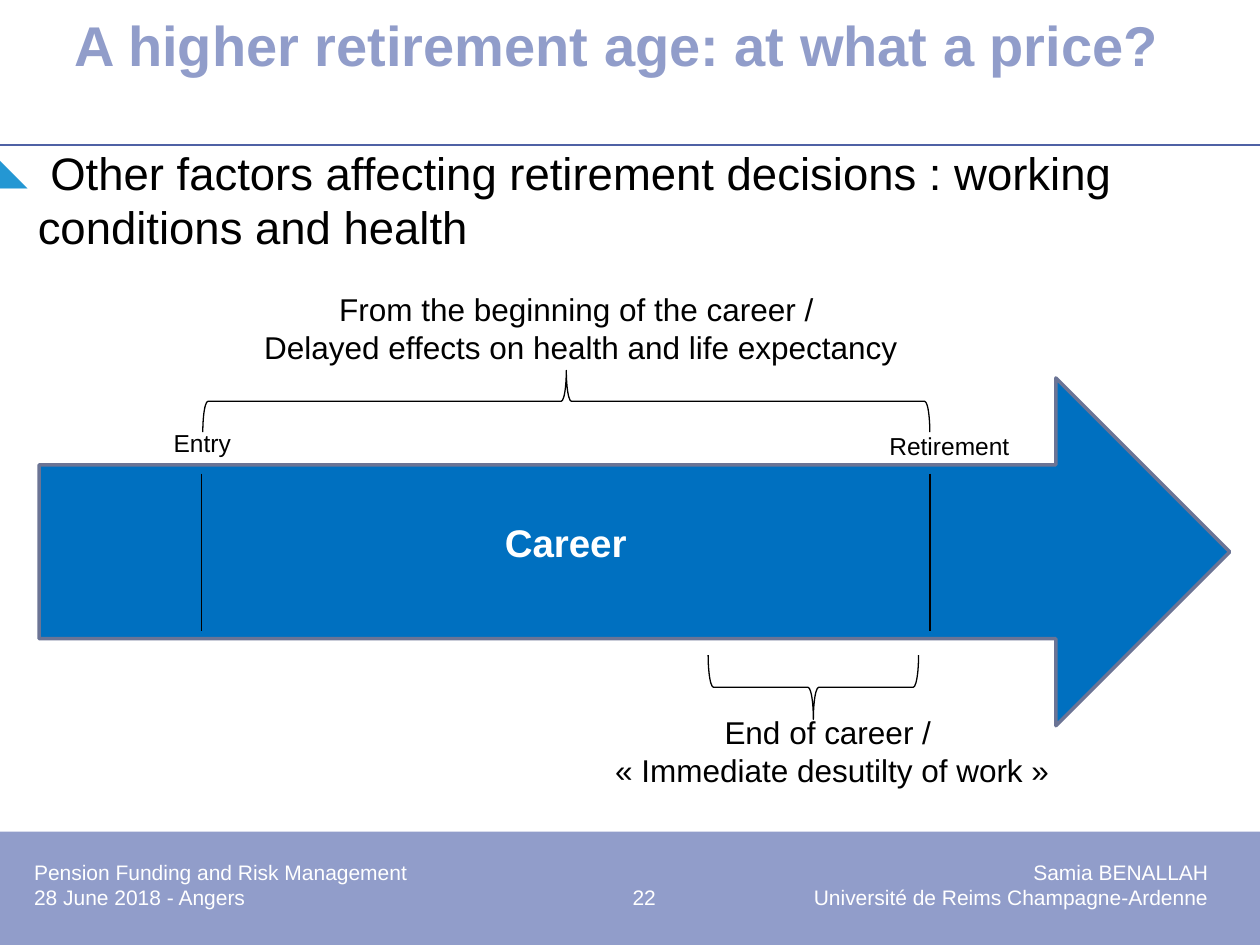
from lxml import etree
from pptx import Presentation
from pptx import util as u
from pptx.dml.color import RGBColor
from pptx.enum import shapes, text
from pptx.oxml.ns import qn

COLS, ROWS = 100, 75
CELL = u.Inches(0.1)
HUE = {"band": "919DCA", "rule": "4F61A5", "mark": "2497D3", "arrow": "0070C0",
       "edge": "6B7495", "ink": "000000", "paper": "FFFFFF"}
LEFT, MID = text.PP_ALIGN.LEFT, text.PP_ALIGN.CENTER
KIND = shapes.MSO_SHAPE


def rgb(name):
    return RGBColor.from_string(HUE[name])


def grid(*cells):
    """Turn grid cells into lengths."""
    return [u.Emu(round(c * CELL)) for c in cells]


def inside(box, x, y, w, h):
    """Place a part, given in cells, relative to its region's box."""
    return box[0] + x, box[1] + y, w, h


def node(parent, tag, **attrs):
    item = etree.SubElement(parent, qn(tag))
    for key, val in attrs.items():
        item.set(key, str(val))
    return item


def write(shape, lines, size, hue="ink", bold=False, align=LEFT, pad=True,
          anchor=text.MSO_ANCHOR.TOP):
    frame = shape.text_frame
    look = {"word_wrap": True, "auto_size": text.MSO_AUTO_SIZE.NONE,
            "vertical_anchor": anchor}
    if not pad:
        look.update({f"margin_{side}": 0 for side in ("left", "top", "right", "bottom")})
    for key, val in look.items():
        setattr(frame, key, val)
    frame.text = "\n".join(lines)
    for para in frame.paragraphs:
        para.alignment = align
        font = para.runs[0].font
        for key, val in {"name": "Arial", "size": u.Pt(size), "bold": bold}.items():
            setattr(font, key, val)
        font.color.rgb = rgb(hue)
    return frame


def label(host, box, lines, size, **look):
    return write(host.add_textbox(*grid(*box)), lines, size, **look)


def block(host, kind, box, fill=None, edge=None, width=0.75):
    shape = host.add_shape(kind, *grid(*box))
    shape.shadow.inherit = False
    if fill:
        shape.fill.solid()
        shape.fill.fore_color.rgb = rgb(fill)
    else:
        shape.fill.background()
    if edge:
        shape.line.color.rgb = rgb(edge)
        shape.line.width = u.Pt(width)
    else:
        shape.line.fill.background()
    return shape


def rule(host, x1, y1, x2, y2, hue):
    line = host.add_connector(shapes.MSO_CONNECTOR.STRAIGHT, *grid(x1, y1, x2, y2))
    line.line.color.rgb = rgb(hue)
    line.line.width = u.Pt(0.75)
    node(line._element.spPr, "a:effectLst")


def brace(host, box, turn):
    """Lay a right brace on its side so that it fills the box."""
    x, y, w, h = box
    upright = (x + (w - h) / 2, y + (h - w) / 2, h, w)
    block(host, KIND.RIGHT_BRACE, upright, edge="ink").rotation = turn


def header(slide, box):
    x, y, w, h = box
    rule(slide.shapes, x, y + h, x + w, y + h, "rule")
    title = slide.shapes.title
    spot = grid(*inside(box, 5.9, 0, 86.6, 7.9))
    for key, val in zip(("left", "top", "width", "height"), spot):
        setattr(title, key, val)
    frame = write(title, ["A higher retirement age: at what a price?"], 32, hue="band",
                  bold=True, pad=False, anchor=text.MSO_ANCHOR.MIDDLE)
    frame.paragraphs[0].line_spacing = 0.85


def body(slide, box):
    words = " Other factors affecting retirement decisions : working conditions and health"
    frame = label(slide.shapes, box, [words], 26, pad=False)
    props = frame.paragraphs[0]._p.get_or_add_pPr()
    indent = u.Inches(0.3)
    props.set("marL", str(indent))
    props.set("indent", str(-indent))
    node(node(props, "a:buClr"), "a:srgbClr", val=HUE["mark"])
    node(props, "a:buSzPct", val=80000)
    node(props, "a:buFont", typeface="Arial")
    node(props, "a:buChar", char="◣")


def career(slide, box):
    host = slide.shapes.add_group_shape().shapes
    block(host, KIND.RIGHT_ARROW, inside(box, 0, 7.5, 94.5, 27.6), "arrow", "edge", 2)
    label(host, inside(box, 23, 18.2, 37.6, 4.7), ["Career"], 22, hue="paper",
          bold=True, align=MID)
    notes = [
        ((6.9, 0, 71.5, 7.5), ["From the beginning of the career /",
                               " Delayed effects on health and life expectancy"]),
        ((41.3, 33.6, 42.6, 7.5), ["End of career /",
                                   " «\u00a0Immediate desutilty of work\u00a0»"]),
    ]
    for spot, lines in notes:
        label(host, inside(box, *spot), lines, 18, align=MID)
    brace(host, inside(box, 13, 6.9, 57.7, 4.9), 270)
    brace(host, inside(box, 53.1, 29.5, 16.7, 5.1), 90)
    dates = [("Entry", 12.9, 6.7, 11, MID), ("Retirement", 70.7, 66.5, 11.2, LEFT)]
    for word, tick, x, y, align in dates:
        top = box[1] + 15.1
        rule(host, box[0] + tick, top, box[0] + tick, top + 12.5, "ink")
        label(host, inside(box, x, y, 12.5, 3.6), [word], 14, align=align)


def footer(slide, box):
    block(slide.shapes, KIND.RECTANGLE, box, "band")
    lines = ["Pension Funding and Risk Management\t\tSamia BENALLAH",
             "28 June 2018 - Angers\t 22\tUniversité de Reims Champagne-Ardenne"]
    frame = label(slide.shapes, inside(box, 2.7, 2.2, 94.5, 5.2), lines, 12,
                  hue="paper", pad=False)
    for para in frame.paragraphs:
        tabs = node(para._p.get_or_add_pPr(), "a:tabLst")
        for cell, side in ((48.2, "ctr"), (93.2, "r")):
            node(tabs, "a:tab", pos=grid(cell)[0], algn=side)


def main():
    deck = Presentation()
    deck.slide_width, deck.slide_height = grid(COLS, ROWS)
    slide = deck.slides.add_slide(deck.slide_layouts[5])
    footer(slide, (0, 66, COLS, 9))
    header(slide, (0, 0, COLS, 11.5))
    body(slide, (0, 11.5, COLS, 52))
    career(slide, (3.1, 22.5, 94.5, 41.1))
    deck.save("out.pptx")


if __name__ == "__main__":
    main()
